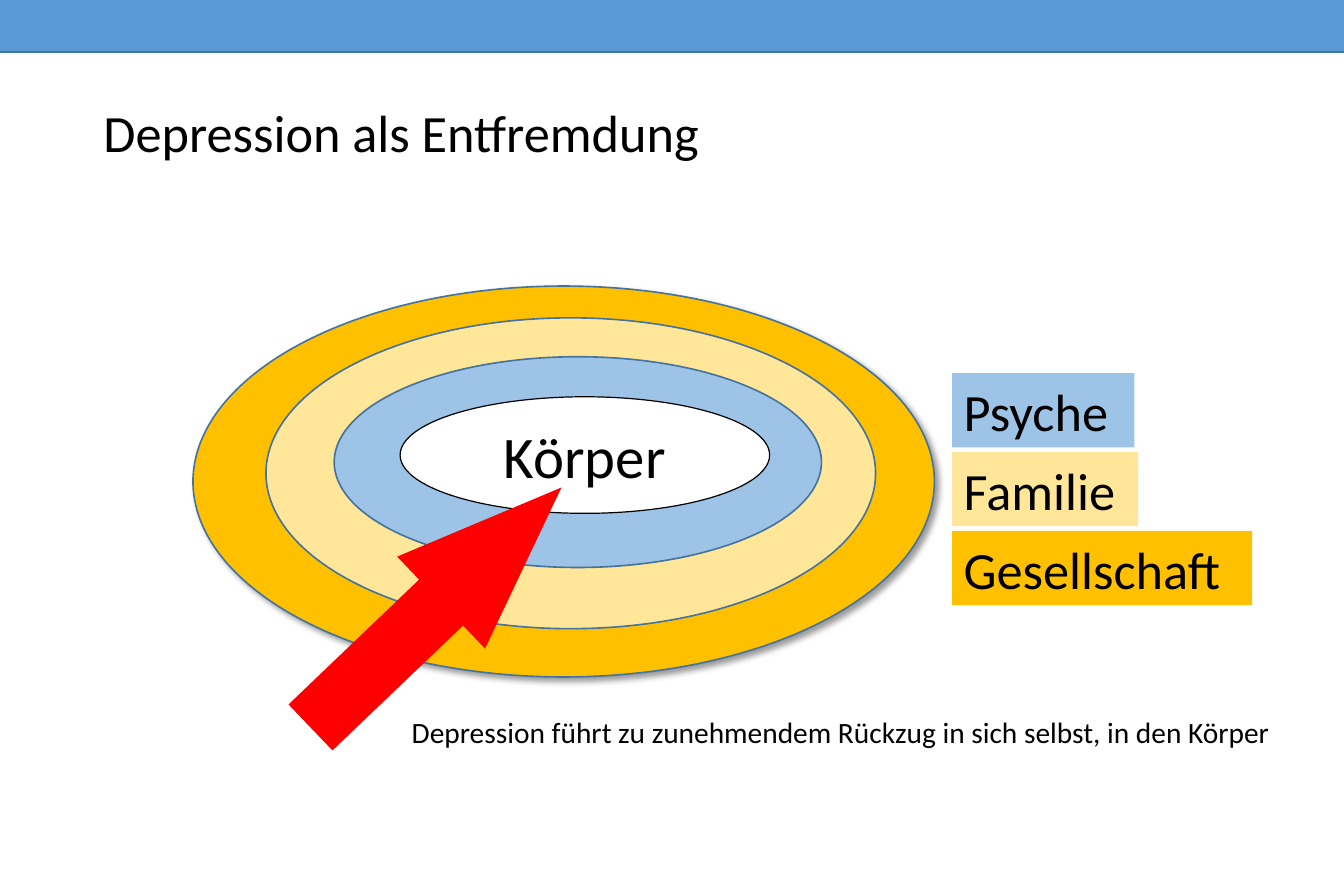
from dataclasses import dataclass

from lxml.etree import SubElement
from pptx import Presentation
from pptx.dml.color import RGBColor
from pptx.enum.shapes import MSO_SHAPE as Preset
from pptx.enum.text import MSO_ANCHOR as Anchor, PP_ALIGN as Align
from pptx.oxml.ns import qn
from pptx.util import Inches, Pt


@dataclass(frozen=True)
class Theme:
    font: str = "Calibri"
    title_size: int = 32
    label_size: int = 32
    core_size: int = 36
    caption_size: int = 18
    text: str = "000000"
    header: str = "5B9BD5"
    outline: str = "43739E"
    society: str = "FFC000"
    family: str = "FFE699"
    psyche: str = "9DC3E6"
    body: str = "FFFFFF"
    arrow: str = "FF0000"


THEME = Theme()


def add_figure(slide, preset, box, fill, line=None, line_width=1):
    shape = slide.shapes.add_shape(preset, *map(Inches, box))
    shape.shadow.inherit = False
    shape.fill.solid()
    shape.fill.fore_color.rgb = RGBColor.from_string(fill)
    if line:
        shape.line.color.rgb = RGBColor.from_string(line)
        shape.line.width = Pt(line_width)
    else:
        shape.line.fill.background()
    return shape


def add_drop_shadow(shape):
    effects = shape.element.spPr.find(qn("a:effectLst"))
    shadow = SubElement(effects, qn("a:outerShdw"), blurRad=str(Pt(4)),
                        dist=str(Pt(3)), dir=str(45 * 60000), algn="tl", rotWithShape="0")
    color = SubElement(shadow, qn("a:srgbClr"), val=THEME.text)
    SubElement(color, qn("a:alpha"), val="40000")


def write(shape, text, size, align=Align.LEFT, anchor=Anchor.TOP):
    text_frame = shape.text_frame
    text_frame.text = text
    text_frame.word_wrap = True
    text_frame.vertical_anchor = anchor
    paragraph = text_frame.paragraphs[0]
    paragraph.alignment = align
    font = paragraph.runs[0].font
    font.name = THEME.font
    font.size = Pt(size)
    font.color.rgb = RGBColor.from_string(THEME.text)


def add_text(slide, box, text, size, anchor=Anchor.TOP):
    text_box = slide.shapes.add_textbox(*map(Inches, box))
    write(text_box, text, size, anchor=anchor)


def add_rings(slide):
    rings = [
        ((1.64, 2.43, 6.3, 3.32), THEME.society),
        ((2.26, 2.7, 5.18, 2.64), THEME.family),
        ((2.84, 3.03, 4.14, 1.79), THEME.psyche),
    ]
    ellipses = [add_figure(slide, Preset.OVAL, box, fill, THEME.outline)
                for box, fill in rings]
    add_drop_shadow(ellipses[0])
    core = add_figure(slide, Preset.OVAL, (3.4, 3.37, 3.14, 0.99),
                      THEME.body, THEME.text, 0.75)
    write(core, "Körper", THEME.core_size, Align.CENTER, Anchor.MIDDLE)


def add_inward_arrow(slide):
    arrow = add_figure(slide, Preset.RIGHT_ARROW, (2.23, 4.62, 2.95, 1.08), THEME.arrow)
    arrow.adjustments[0] = 0.5
    arrow.adjustments[1] = 1.31
    arrow.rotation = 316.3


def add_legend(slide):
    left, top, height, pitch = 8.09, 3.17, 0.63, 0.67
    entries = [
        ("Psyche", 1.55, THEME.psyche),
        ("Familie", 1.58, THEME.family),
        ("Gesellschaft", 2.55, THEME.society),
    ]
    for row, (name, width, fill) in enumerate(entries):
        label = add_figure(slide, Preset.RECTANGLE,
                           (left, top + row * pitch, width, height), fill)
        write(label, name, THEME.label_size)


def main():
    presentation = Presentation()
    presentation.slide_width = Inches(11.42)
    presentation.slide_height = Inches(7.5)
    slide = presentation.slides.add_slide(presentation.slide_layouts[6])

    add_figure(slide, Preset.RECTANGLE, (-0.36, -0.14, 12.29, 0.58),
               THEME.header, THEME.outline)
    add_rings(slide)
    add_text(slide, (0.78, 0.58, 9.85, 1.08), "Depression als Entfremdung",
             THEME.title_size, Anchor.MIDDLE)
    add_inward_arrow(slide)
    add_legend(slide)
    add_text(slide, (3.4, 6.02, 7.81, 0.4),
             "Depression führt zu zunehmendem Rückzug in sich selbst, in den Körper",
             THEME.caption_size)
    presentation.save("out.pptx")


if __name__ == "__main__":
    main()
